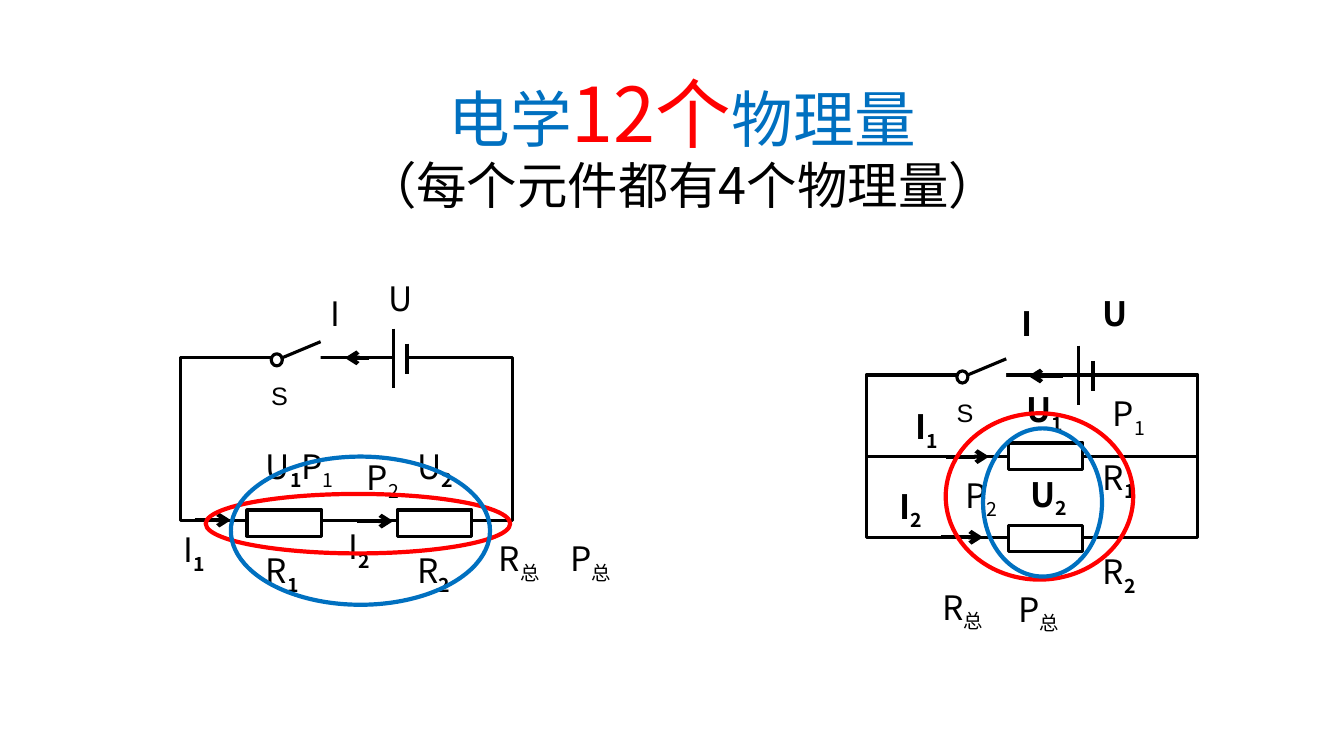
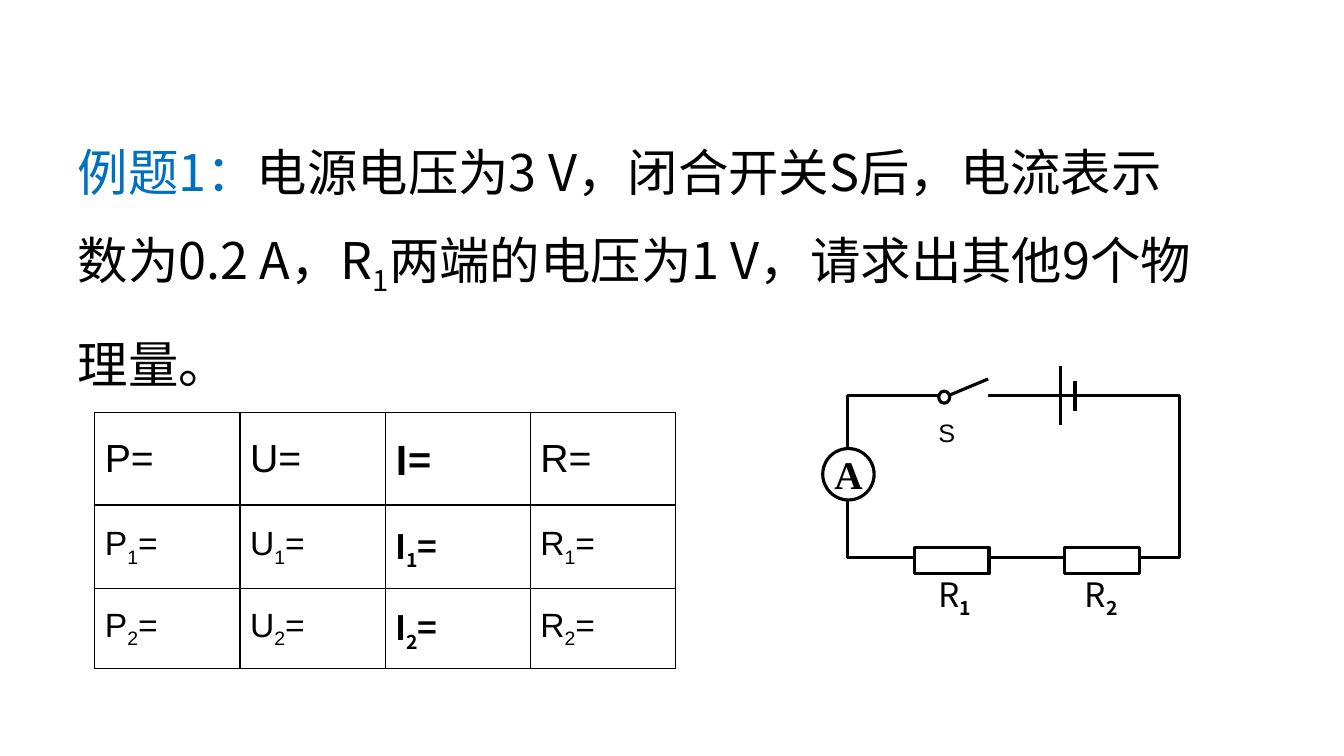
"""Build two slides on the physical quantities of series and parallel circuits."""
from lxml import etree
from pptx import Presentation
from pptx.dml.color import RGBColor
from pptx.enum.shapes import MSO_CONNECTOR, MSO_SHAPE
from pptx.enum.text import MSO_ANCHOR, MSO_AUTO_SIZE, PP_ALIGN
from pptx.oxml.ns import qn
from pptx.util import Inches, Pt

BLACK = RGBColor(0x00, 0x00, 0x00)
WHITE = RGBColor(0xFF, 0xFF, 0xFF)
RED = RGBColor(0xFF, 0x00, 0x00)
BLUE = RGBColor(0x00, 0x70, 0xC0)
RECTANGLE, OVAL = MSO_SHAPE.RECTANGLE, MSO_SHAPE.OVAL
STRAIGHT = MSO_CONNECTOR.STRAIGHT
TOP, MIDDLE = MSO_ANCHOR.TOP, MSO_ANCHOR.MIDDLE
LEFT, CENTER = PP_ALIGN.LEFT, PP_ALIGN.CENTER
NO_FIT = MSO_AUTO_SIZE.NONE
TITLE_ONLY = 5

TITLE_FONT = "Noto Sans CJK SC"
LABEL_FONT = "Noto Sans CJK JP"
CURRENT_FONT = "Noto Sans CJK TC"
PLAIN_FONT = "Arial"
METER_FONT = "Times New Roman"

COLUMNS, ROWS = 13.33, 7.5
CELL = Inches(1)
THIN, THICK = 2.25, 3
LOOP_WIDTH, LOOP_HEIGHT = 3.29, 1.61
RESISTOR_WIDTH, RESISTOR_HEIGHT = 0.74, 0.26


def grid(*cells):
    """Turn counts of grid cells into lengths."""
    return [round(count * CELL) for count in cells]


class CircuitDeck:
    """Hold the style and the current slide."""

    def __init__(self):
        """Open an empty deck of the right size."""
        self.deck = Presentation()
        self.deck.slide_width, self.deck.slide_height = grid(COLUMNS, ROWS)
        self.slide = None

    def add_slide(self):
        """Start a new slide."""
        self.slide = self.deck.slides.add_slide(self.deck.slide_layouts[TITLE_ONLY])

    def style(self, paragraph, font_name, size=None, color=None):
        """Set the font that all runs of a paragraph share."""
        font = paragraph.font
        font.name = font_name
        if size:
            font.size = Pt(size)
        if color is not None:
            font.color.rgb = color
        properties = paragraph._p.pPr.find(qn("a:defRPr"))
        etree.SubElement(properties, qn("a:ea")).set("typeface", font_name)

    def run(self, paragraph, text, size=None, color=None, bold=None, lowered=False):
        """Add a run, with only what differs from its paragraph."""
        run = paragraph.add_run()
        run.text = text
        if size:
            run.font.size = Pt(size)
        if color is not None:
            run.font.color.rgb = color
        if bold is not None:
            run.font.bold = bold
        if lowered:
            run._r.get_or_add_rPr().set("baseline", "-25000")

    def title(self, left, top, width, height, lines, align):
        """Fill the title with lines of (pitch, size, runs)."""
        heading = self.slide.shapes.title
        heading.left, heading.top, heading.width, heading.height = grid(
            left, top, width, height)
        frame = heading.text_frame
        frame.auto_size = NO_FIT
        frame.vertical_anchor = TOP
        for index, (pitch, size, runs) in enumerate(lines):
            paragraph = frame.add_paragraph() if index else frame.paragraphs[0]
            paragraph.alignment = align
            paragraph.line_spacing = Pt(pitch)
            self.style(paragraph, TITLE_FONT, size)
            for text, options in runs:
                self.run(paragraph, text, **options)

    def shape(self, kind, left, top, width, height, fill=None, line=None, weight=THIN):
        """Add a preset shape with a plain fill and outline."""
        shape = self.slide.shapes.add_shape(kind, *grid(left, top, width, height))
        shape.shadow.inherit = False
        if fill is None:
            shape.fill.background()
        else:
            shape.fill.solid()
            shape.fill.fore_color.rgb = fill
        if line is None:
            shape.line.fill.background()
        else:
            shape.line.color.rgb = line
            shape.line.width = Pt(weight)
        return shape

    def wire(self, start, end, weight=THIN, arrow=False):
        """Draw a straight wire, or an arrow of current."""
        wire = self.slide.shapes.add_connector(STRAIGHT, *grid(*start, *end))
        wire.line.color.rgb = BLACK
        wire.line.width = Pt(weight)
        properties = wire._element.spPr
        if arrow:
            head = etree.SubElement(properties.find(qn("a:ln")), qn("a:tailEnd"))
            head.set("type", "arrow")
        etree.SubElement(properties, qn("a:effectLst"))
        return wire

    def label(self, left, top, symbol, lowered="", bold=None, lowered_bold=None,
              font_name=LABEL_FONT, size=24):
        """Write a quantity with its subscript."""
        box = self.slide.shapes.add_textbox(*grid(left, top, 0.9, 0.5))
        frame = box.text_frame
        frame.word_wrap = True
        if font_name == LABEL_FONT:
            frame.margin_top = 0
        paragraph = frame.paragraphs[0]
        self.style(paragraph, font_name, size, BLACK)
        self.run(paragraph, symbol, bold=bold)
        if lowered:
            self.run(paragraph, lowered, bold=lowered_bold, lowered=True)

    def labels(self, entries, bold=None, lowered_bold=None):
        """Write several quantities in one weight."""
        for left, top, symbol, lowered in entries:
            self.label(left, top, symbol, lowered, bold, lowered_bold)

    def resistor(self, left, middle):
        """Draw a resistor centred on a wire."""
        self.shape(RECTANGLE, left, middle - RESISTOR_HEIGHT / 2,
                   RESISTOR_WIDTH, RESISTOR_HEIGHT, WHITE, BLACK)

    def circuit(self, left, top, resistors, battery_gap=False):
        """Draw a loop with switch, battery and resistors."""
        loop = self.shape(RECTANGLE, left, top, LOOP_WIDTH, LOOP_HEIGHT, line=BLACK)
        battery, switch = left + 2.11, left + 0.96
        if battery_gap:
            self.shape(RECTANGLE, battery, top - 0.08, 0.15, 0.15, WHITE)
        self.wire((battery, top - 0.29), (battery, top + 0.3))
        self.wire((battery + 0.14, top - 0.14), (battery + 0.14, top + 0.16), THICK)
        self.shape(RECTANGLE, switch, top - 0.16, 0.43, 0.3, WHITE)
        self.wire((switch, top + 0.02), (switch + 0.43, top - 0.16))
        self.shape(OVAL, switch - 0.06, top - 0.04, 0.11, 0.12, WHITE, BLACK)
        self.label(left + 0.8, top + 0.17, "S", font_name=PLAIN_FONT, size=18)
        for across, down in resistors:
            self.resistor(left + across, top + down)
        return loop

    def ring(self, left, top, width, height, color):
        """Circle a part of the circuit."""
        self.shape(OVAL, left, top, width, height, line=color, weight=THICK)

    def ammeter(self, left, top, size):
        """Draw an ammeter."""
        meter = self.shape(OVAL, left, top, size, size, WHITE, BLACK)
        frame = meter.text_frame
        frame.margin_left = frame.margin_right = 0
        frame.margin_top = frame.margin_bottom = 0
        frame.vertical_anchor = MIDDLE
        paragraph = frame.paragraphs[0]
        paragraph.alignment = CENTER
        self.style(paragraph, METER_FONT, 28, BLACK)
        self.run(paragraph, "A", bold=True)

    def quantity_table(self, left, top, width, heights, symbols):
        """Tabulate each symbol for the whole circuit and each resistor."""
        frame = self.slide.shapes.add_table(
            len(heights), len(symbols), *grid(left, top, width, sum(heights)))
        table = frame.table
        table.first_row = table.horz_banding = False
        for row, height in enumerate(heights):
            table.rows[row].height = grid(height)[0]
            for column, symbol in enumerate(symbols):
                cell = table.cell(row, column)
                self.border(cell)
                cell.vertical_anchor = MIDDLE
                if row:
                    cell.fill.solid()
                    cell.fill.fore_color.rgb = WHITE
                else:
                    cell.fill.background()
                current = symbol == "I"
                paragraph = cell.text_frame.paragraphs[0]
                self.style(paragraph, CURRENT_FONT if current else PLAIN_FONT,
                           24 if row else 28, BLACK)
                paragraph.font.bold = current
                if row:
                    self.run(paragraph, symbol)
                    self.run(paragraph, str(row), lowered=True)
                    self.run(paragraph, "=")
                else:
                    self.run(paragraph, symbol + "=")

    def border(self, cell):
        """Rule all four sides of a cell."""
        properties = cell._tc.get_or_add_tcPr()
        for side in ("lnL", "lnR", "lnT", "lnB"):
            rule = etree.SubElement(properties, qn("a:" + side), w=str(Pt(1)))
            fill = etree.SubElement(rule, qn("a:solidFill"))
            etree.SubElement(fill, qn("a:srgbClr"), val=str(BLACK))

    def series_circuit(self):
        """Show the quantities of resistors in series."""
        self.circuit(1.79, 3.55, [(0.66, 1.64), (2.15, 1.64)], battery_gap=True)
        for start, end in (((1.93, 5.16), (2.29, 5.16)),
                           ((3.54, 5.17), (3.9, 5.17)),
                           ((3.66, 3.55), (3.42, 3.55))):
            self.wire(start, end, THICK, arrow=True)
        self.labels([(2.54, 5.46, "R", "1"), (4.04, 5.46, "R", "2"),
                     (2.54, 4.42, "U", "1"), (4.04, 4.42, "U", "2"),
                     (1.72, 5.25, "I", "1"), (3.36, 5.22, "I", "2")],
                    lowered_bold=True)
        self.labels([(3.76, 2.76, "U", ""), (3.18, 2.91, "I", ""),
                     (2.89, 4.42, "P", "1"), (3.54, 4.53, "P", "2"),
                     (4.85, 5.34, "R", "总"), (5.56, 5.34, "P", "总")])
        self.ring(2.04, 4.9, 3.02, 0.59, RED)
        self.ring(2.29, 4.53, 2.57, 1.47, BLUE)

    def parallel_circuit(self):
        """Show the quantities of resistors in parallel."""
        loop = self.circuit(8.59, 3.72, [(1.41, 1.62)])
        middle = 3.72 + LOOP_HEIGHT / 2
        branch = self.wire((8.59, middle), (8.59 + LOOP_WIDTH, middle))
        branch.begin_connect(loop, 1)
        branch.end_connect(loop, 3)
        self.resistor(10, middle)
        for start, end in (((10.54, 3.73), (10.2, 3.73)),
                           ((9.38, 4.53), (9.81, 4.53)),
                           ((9.33, 5.33), (9.75, 5.33))):
            self.wire(start, end, THICK, arrow=True)
        self.labels([(10.84, 4.53, "R", "1"), (10.84, 5.47, "R", "2")],
                    lowered_bold=True)
        self.labels([(10.03, 3.01, "I", ""), (10.84, 2.91, "U", ""),
                     (10.08, 3.86, "U", "1"), (10.12, 4.7, "U", "2"),
                     (8.98, 4.03, "I", "1"), (8.82, 4.82, "I", "2")],
                    bold=True, lowered_bold=True)
        self.labels([(10.94, 3.9, "P", "1"), (9.48, 4.71, "P", "2"),
                     (9.25, 5.82, "R", "总"), (10, 5.84, "P", "总")])
        self.ring(9.38, 4.1, 1.86, 1.65, RED)
        self.ring(9.75, 4.25, 1.18, 1.47, BLUE)


def main():
    """Build and save both slides."""
    deck = CircuitDeck()

    deck.add_slide()
    deck.title(1.22, 0.54, 11.1, 1.61, [
        (70, 44, [("电学", {"color": BLUE}),
                  ("12个", {"size": 54, "color": RED}),
                  ("物理量", {"color": BLUE})]),
        (41, 36, [("（每个元件都有4个物理量）", {"color": BLACK})]),
    ], CENTER)
    deck.series_circuit()
    deck.parallel_circuit()

    deck.add_slide()
    deck.title(0.67, 1, 11.28, 2.83, [
        (68.5, 36, [("例题1：", {"color": BLUE}),
                    ("电源电压为3 V，闭合开关S后，电流表示数为0.2 A，R", {"color": BLACK}),
                    ("1", {"color": BLACK, "lowered": True}),
                    ("两端的电压为1 V，请求出其他9个物理量。", {"color": BLACK})]),
    ], LEFT)
    deck.circuit(8.41, 3.92, [(0.66, 1.64), (2.15, 1.64)])
    deck.labels([(9.21, 5.69, "R", "1"), (10.66, 5.69, "R", "2")], lowered_bold=True)
    deck.ammeter(8.16, 4.45, 0.51)
    deck.quantity_table(0.94, 4.09, 5.76, (0.92, 0.83, 0.79), "PUIR")

    deck.deck.save("out.pptx")


if __name__ == "__main__":
    main()
